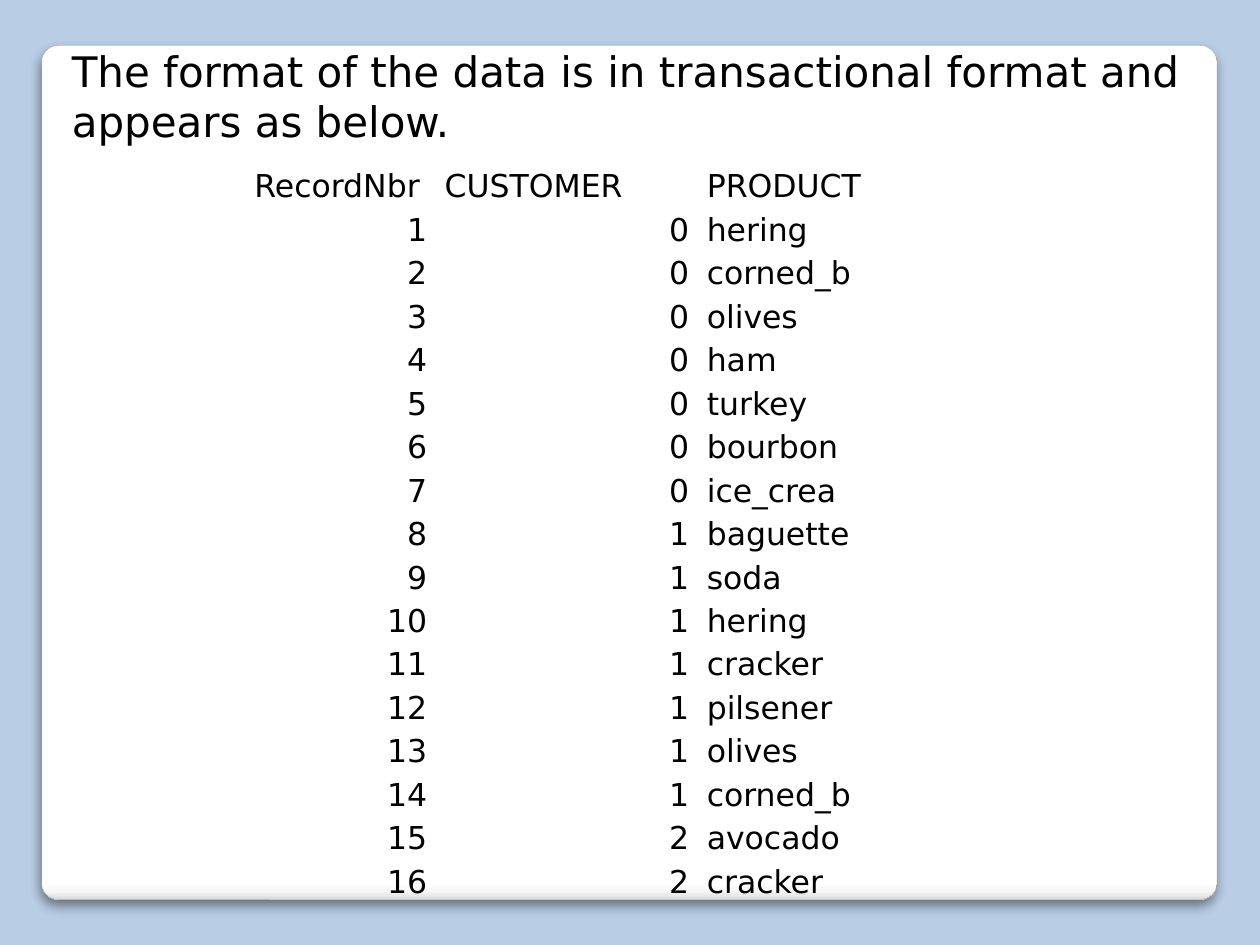
import pptx
import pptx.util
import pptx.oxml
import pptx.oxml.ns
import pptx.dml.color
import pptx.enum.shapes
import pptx.enum.text

Inches = pptx.util.Inches
Pt = pptx.util.Pt
Align = pptx.enum.text.PP_ALIGN
Anchor = pptx.enum.text.MSO_ANCHOR

TITLE = "The format of the data is in transactional format and appears as below."
HEADS = ["RecordNbr", "CUSTOMER", "PRODUCT"]
SALES = [
    (0, ["hering", "corned_b", "olives", "ham", "turkey", "bourbon", "ice_crea"]),
    (1, ["baguette", "soda", "hering", "cracker", "pilsener", "olives", "corned_b"]),
    (2, ["avocado", "cracker"]),
]
WIDTHS = [1.51, 2.08, 2.27]
ALIGNS = [Align.RIGHT, Align.RIGHT, Align.LEFT]
HEIGHT, HEAD = 6.21, 0.69
FONT = "DejaVu Sans"
COLORS = {"back": "B9CDE5", "edge": "A4A4A4", "text": "000000", "shade": "000000"}
STOPS = [(0, "FFFFFF"), (98, "FFFFFF"), (99, "F7F7F7"), (100, "DADADA")]
PLAIN = "{2D5ABB26-0587-4C30-8999-92F81FD0307C}"
SPACE = pptx.oxml.ns.nsdecls("a")


def color(name):
    return pptx.dml.color.RGBColor.from_string(COLORS[name])


def write(para, text, size):
    run = para.add_run()
    run.text = text
    run.font.size = Pt(size)
    run.font.name = FONT
    run.font.color.rgb = color("text")


def add_card(slide):
    card = slide.shapes.add_shape(
        pptx.enum.shapes.MSO_SHAPE.ROUNDED_RECTANGLE,
        Inches(0.33), Inches(0.36), Inches(9.33), Inches(6.78))
    card.adjustments[0] = 0.02
    card.line.color.rgb = color("edge")
    card.line.width = Pt(0.16)
    card.shadow.inherit = False
    props = card.element.spPr
    stops = "".join(
        f'<a:gs pos="{pos * 1000}"><a:srgbClr val="{tone}"/></a:gs>'
        for pos, tone in STOPS)
    props.find(pptx.oxml.ns.qn("a:prstGeom")).addnext(pptx.oxml.parse_xml(
        f'<a:gradFill {SPACE}><a:gsLst>{stops}</a:gsLst>'
        '<a:lin ang="5400000" scaled="0"/></a:gradFill>'))
    props.find(pptx.oxml.ns.qn("a:effectLst")).append(pptx.oxml.parse_xml(
        f'<a:outerShdw {SPACE} blurRad="{Pt(6)}" dist="{Pt(4)}" dir="5400000">'
        f'<a:srgbClr val="{COLORS["shade"]}"><a:alpha val="44000"/></a:srgbClr>'
        '</a:outerShdw>'))


def add_sales(slide):
    pairs = [(buyer, item) for buyer, items in SALES for item in items]
    rows = [HEADS] + [(n, *pair) for n, pair in enumerate(pairs, 1)]
    frame = slide.shapes.add_table(
        len(rows), len(HEADS), Inches(1.95), Inches(0.94),
        Inches(sum(WIDTHS)), Inches(HEIGHT))
    table = frame.table
    table.first_row = table.horz_banding = False
    style = next(frame.element.iter(pptx.oxml.ns.qn("a:tableStyleId")))
    style.text = PLAIN
    for col, width in zip(table.columns, WIDTHS):
        col.width = Inches(width)
    for r, row in enumerate(rows):
        table.rows[r].height = Inches((HEIGHT - HEAD) / len(pairs) if r else HEAD)
        for c, value in enumerate(row):
            cell = table.cell(r, c)
            cell.fill.background()
            cell.vertical_anchor = Anchor.BOTTOM
            cell.margin_left = cell.margin_right = Inches(0.07)
            cell.margin_top = cell.margin_bottom = 0
            para = cell.text_frame.paragraphs[0]
            para.alignment = ALIGNS[c] if r else Align.LEFT
            para.line_spacing = 1.15
            write(para, str(value), 18)


def add_title(slide):
    title = slide.shapes.title
    title.left, title.top = Inches(0.47), Inches(0.31)
    title.width, title.height = Inches(9.14), Inches(0.91)
    frame = title.text_frame
    frame.word_wrap = True
    frame.auto_size = pptx.enum.text.MSO_AUTO_SIZE.SHAPE_TO_FIT_TEXT
    frame.vertical_anchor = Anchor.TOP
    para = frame.paragraphs[0]
    para.alignment = Align.LEFT
    write(para, TITLE, 24)
    title.element.getparent().append(title.element)


def main():
    deck = pptx.Presentation()
    deck.slide_width, deck.slide_height = Inches(10), Inches(7.5)
    slide = deck.slides.add_slide(deck.slide_layouts[5])
    fill = slide.background.fill
    fill.solid()
    fill.fore_color.rgb = color("back")
    add_card(slide)
    add_sales(slide)
    add_title(slide)
    deck.save("out.pptx")


if __name__ == "__main__":
    main()
